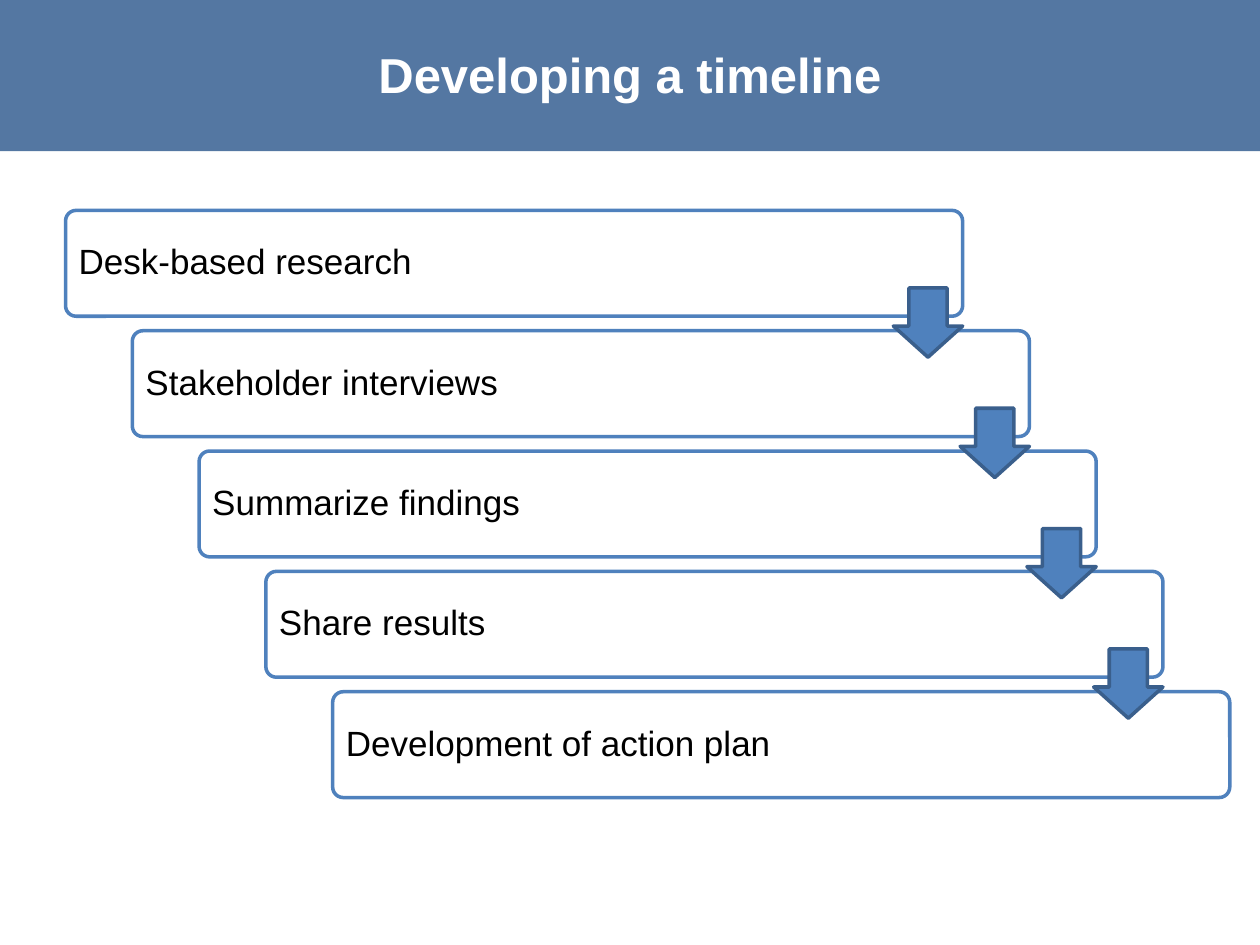
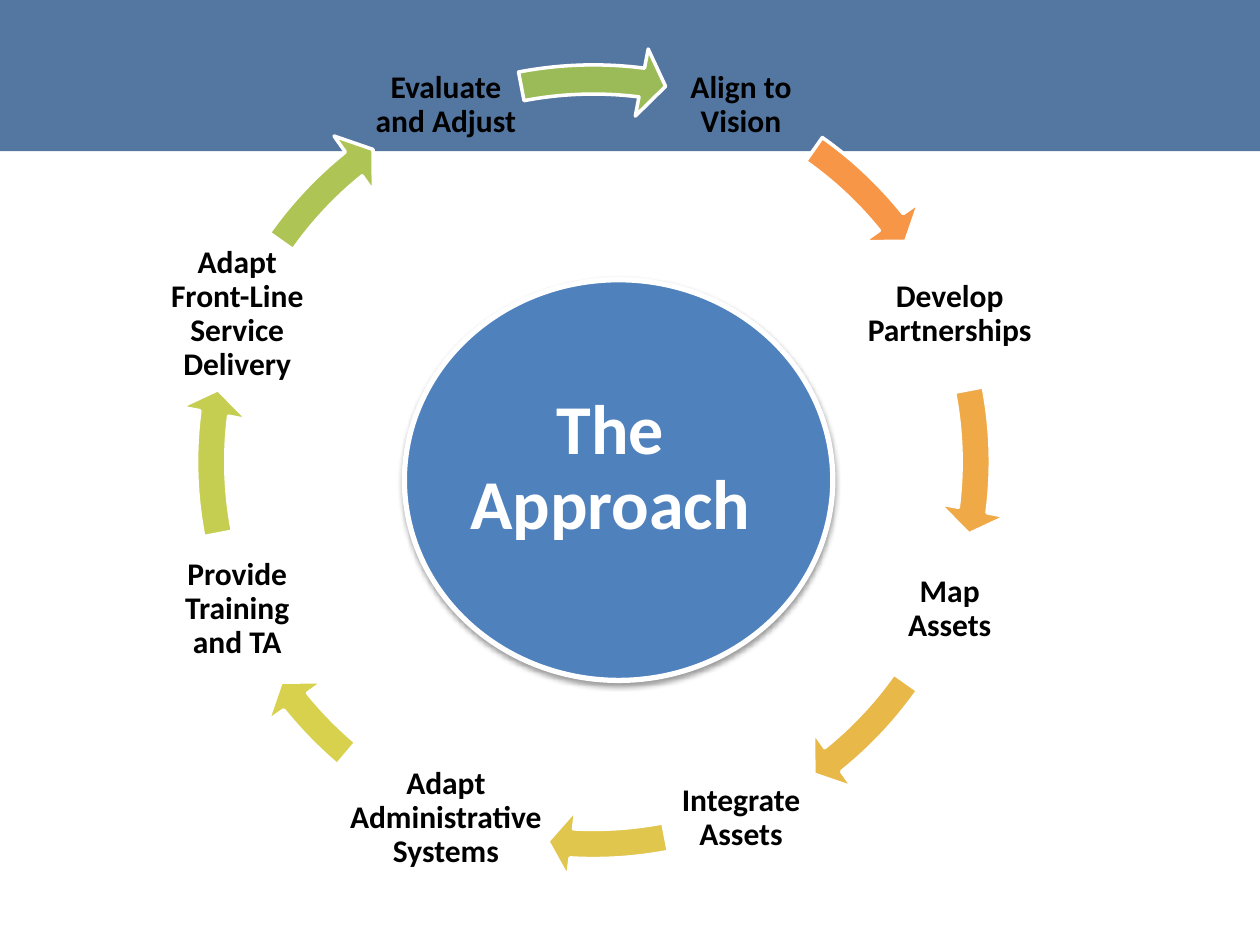
from math import cos, radians, sin

from lxml import etree
from pptx import Presentation
from pptx.dml.color import RGBColor
from pptx.enum.shapes import MSO_SHAPE
from pptx.enum.text import MSO_ANCHOR, PP_ALIGN
from pptx.oxml.ns import qn
from pptx.util import Inches, Pt

LEFT, CENTER = PP_ALIGN.LEFT, PP_ALIGN.CENTER
MIDDLE = MSO_ANCHOR.MIDDLE
RECTANGLE, ROUNDED = MSO_SHAPE.RECTANGLE, MSO_SHAPE.ROUNDED_RECTANGLE
OVAL, DOWN_ARROW = MSO_SHAPE.OVAL, MSO_SHAPE.DOWN_ARROW
CIRCULAR_ARROW = MSO_SHAPE.CIRCULAR_ARROW

SLIDE_WIDTH, SLIDE_HEIGHT = Inches(10), Inches(7.5)
COLUMNS, ROWS = 100, 75
CELL = SLIDE_WIDTH / COLUMNS  # the grid cells are square

BAND, BLUE, DARK_BLUE = "376092", "4F81BD", "3A5F8C"
WHITE, BLACK = "FFFFFF", "000000"

TITLE = {"name": "Arial", "size": Pt(28), "bold": True}
STAGE = {"name": "Arial", "size": Pt(20)}
LABEL = {"name": "Calibri", "size": Pt(18), "bold": True}
HUB = {"name": "Calibri", "size": Pt(40), "bold": True}

STAGES = ["Desk-based research", "Stakeholder interviews", "Summarize findings",
          "Share results", "Development of action plan"]

# label, label width in columns, arrow colour, arrow start and end in degrees
CYCLE = [
    ("Align to Vision", 11.8, "F79646", 305.22, 321.17),
    ("Develop Partnerships", 13.8, "F0A947", 349.12, 7.26),
    ("Map Assets", 11.8, "E8B949", 35.22, 51.17),
    ("Integrate Assets", 11.8, "E0C64C", 79.12, 93.25),
    ("Adapt Administrative Systems", 16.1, "D7D14E", 130.23, 141.17),
    ("Provide Training and TA", 11.8, "C5CE51", 169.12, 187.26),
    ("Adapt Front-Line Service Delivery", 11.8, "AEC555", 215.22, 231.17),
    ("Evaluate and Adjust", 11.8, "9BBB59", 259.12, 277.26),
]


def color(hex_code):
    return RGBColor.from_string(hex_code)


def grid(*cells):
    return [round(cell * CELL) for cell in cells]


def add_figure(page, preset, area, fill, line=None, line_width=2, adjust=()):
    """Add a preset shape; area is left, top, width, height in grid cells."""
    figure = page.shapes.add_shape(preset, *grid(*area))
    figure.shadow.inherit = False
    figure.fill.solid()
    figure.fill.fore_color.rgb = color(fill)
    if line:
        figure.line.color.rgb = color(line)
        figure.line.width = Pt(line_width)
    else:
        figure.line.fill.background()
    for index, value in enumerate(adjust):
        figure.adjustments[index] = value
    return figure


def set_alpha(color_element, percent):
    etree.SubElement(color_element, qn("a:alpha"), val=str(percent * 1000))


def add_drop_shadow(figure):
    effects = figure._element.spPr.find(qn("a:effectLst"))
    shadow = etree.SubElement(effects, qn("a:outerShdw"), blurRad=str(Pt(3.1)),
                              dist=str(Pt(1.6)), dir="5400000", rotWithShape="0")
    set_alpha(etree.SubElement(shadow, qn("a:srgbClr"), val=BLACK), 38)


def write(box, text, style, ink, align=CENTER, inset=0.3, spacing=0.9):
    """Fill a box with one vertically centred paragraph; inset is in cells."""
    frame = box.text_frame
    margin, = grid(inset)
    settings = {"word_wrap": True, "vertical_anchor": MIDDLE,
                "margin_left": margin, "margin_right": margin,
                "margin_top": margin, "margin_bottom": margin}
    for name, value in settings.items():
        setattr(frame, name, value)
    para = frame.paragraphs[0]
    para.alignment = align
    para.line_spacing = spacing
    span = para.add_run()
    span.text = text
    for name, value in style.items():
        setattr(span.font, name, value)
    span.font.color.rgb = color(ink)


def add_text(page, area, text, style, ink, **layout):
    write(page.shapes.add_textbox(*grid(*area)), text, style, ink, **layout)


def add_page(deck):
    """Add a blank page with the band across its top."""
    page = deck.slides.add_slide(deck.slide_layouts[6])
    band = add_figure(page, RECTANGLE, (0, 0, COLUMNS, 12), BAND)
    set_alpha(band._element.spPr.find(qn("a:solidFill"))[0], 85)
    return page


def add_staircase(page):
    left, top, width, height = 5.2, 16.7, 71.2, 8.4
    step_x, step_y = 5.3, 9.55
    arrow_size, arrow_drop = 5.5, 6.15
    for index, stage in enumerate(STAGES):
        area = (left + index * step_x, top + index * step_y, width, height)
        box = add_figure(page, ROUNDED, area, WHITE, BLUE, adjust=[0.1])
        write(box, stage, STAGE, BLACK, align=LEFT, inset=0.8)
    for index in range(len(STAGES) - 1):
        area = (left + width - arrow_size + index * step_x,
                top + arrow_drop + index * step_y, arrow_size, arrow_size)
        add_figure(page, DOWN_ARROW, area, BLUE, DARK_BLUE, adjust=[0.55, 0.45])


def add_cycle(page):
    center_x, center_y, radius = 47.1, 36.65, 30.6
    ring, label_height = 66.1, 11.8
    ring_area = (center_x - ring / 2, center_y - ring / 2, ring, ring)
    sector = 360 / len(CYCLE)
    for index, (label, width, fill, start, end) in enumerate(CYCLE):
        angle = radians((index + 0.5) * sector - 90)
        area = (center_x + radius * cos(angle) - width / 2,
                center_y + radius * sin(angle) - label_height / 2,
                width, label_height)
        add_text(page, area, label, LABEL, BLACK)
        # python-pptx scales adjustments by 100000, angles count 60000 a degree
        adjust = [0.035, 2.168, end * 0.6, start * 0.6, 0.041]
        add_figure(page, CIRCULAR_ARROW, ring_area, fill, WHITE, adjust=adjust)


def add_hub(page):
    disc = add_figure(page, OVAL, (32.1, 22.2, 34, 31.8), BLUE, WHITE, line_width=3)
    add_drop_shadow(disc)
    add_text(page, (36.4, 26, 24.1, 22.5), "The Approach", HUB, WHITE, inset=0.4)


def main():
    deck = Presentation()
    deck.slide_width, deck.slide_height = SLIDE_WIDTH, SLIDE_HEIGHT

    timeline = add_page(deck)
    add_text(timeline, (0, 0, COLUMNS, 11.7), "Developing a timeline",
             TITLE, WHITE, spacing=1.0)
    add_staircase(timeline)

    approach = add_page(deck)
    add_cycle(approach)
    add_hub(approach)

    deck.save("out.pptx")


if __name__ == "__main__":
    main()
